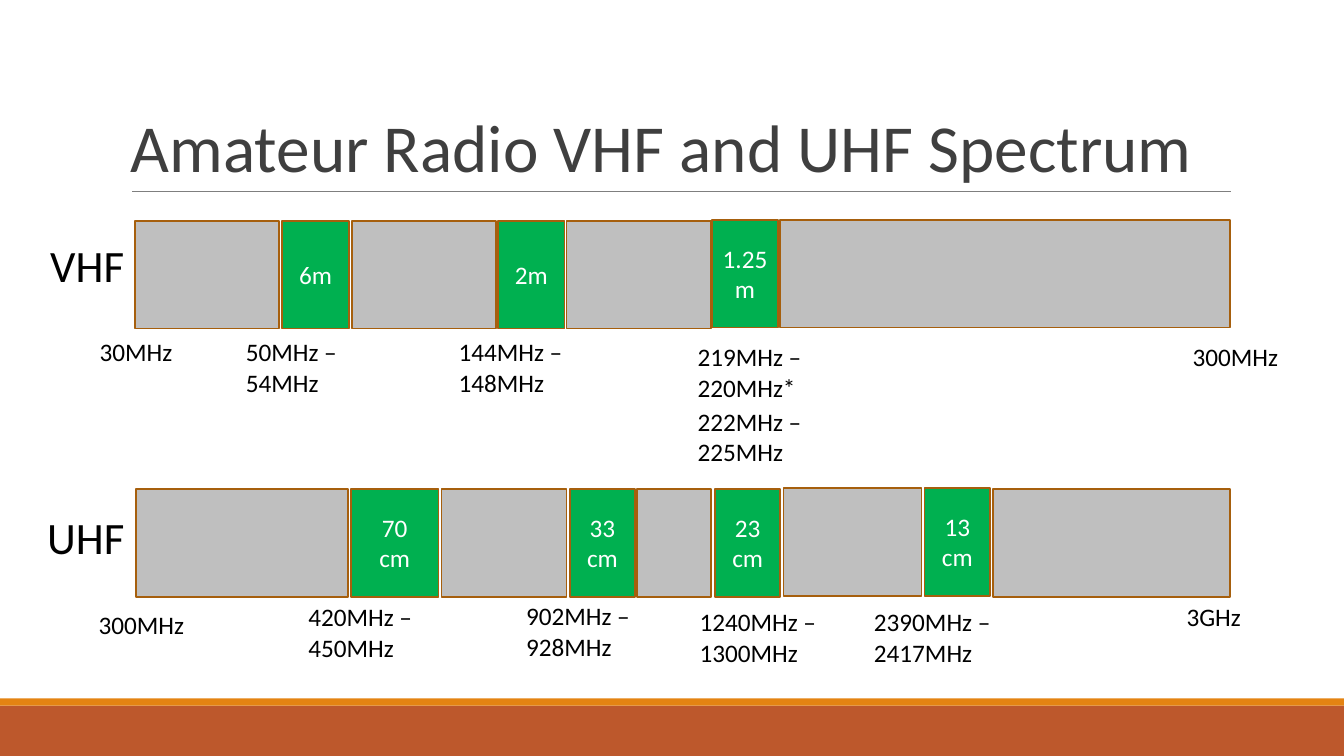
from lxml import etree
from pptx import Presentation
from pptx import util as u
from pptx.dml.color import RGBColor
from pptx.enum import shapes, text
from pptx.oxml.ns import qn

PX = 9144
WHITE = RGBColor(0xFF, 0xFF, 0xFF)
BLACK = RGBColor(0, 0, 0)
TITLE_GRAY = RGBColor(0x3F, 0x3F, 0x3F)
RULE_GRAY = RGBColor(0x7F, 0x7F, 0x7F)
BAND_GREEN = RGBColor(0x00, 0xB0, 0x50)
GAP_GRAY = RGBColor(0xBF, 0xBF, 0xBF)
EDGE_BROWN = RGBColor(0xA6, 0x5F, 0x0D)
FOOTER_RUST = RGBColor(0xBD, 0x58, 0x2C)
FOOTER_ORANGE = RGBColor(0xE4, 0x83, 0x12)
BAR_HEIGHT = 107

VHF_BLOCKS = [
    (134, 219, 143, ""), (280, 219, 66, "6m"), (349, 219, 143, ""),
    (494, 219, 66, "2m"), (562, 219, 143, ""), (706, 218, 66, "1.25m"),
    (774, 218, 446, ""),
]
UHF_BLOCKS = [
    (135, 485, 210, ""), (348, 485, 87, "70\ncm"), (438, 485, 124, ""),
    (565, 485, 65, "33 cm"), (632, 485, 73, ""), (709, 485, 65, "23 cm"),
    (777, 484, 137, ""), (917, 484, 65, "13 cm"), (985, 485, 235, ""),
]
FREQUENCIES = [
    (89, 329, 93, "30MHz"),
    (234, 329, 112, "50MHz –\n54MHz"),
    (445, 329, 130, "144MHz –\n148MHz"),
    (682, 334, 130, "219MHz –\n220MHz*"),
    (682, 398, 130, "222MHz –\n225MHz"),
    (1173, 334, 106, "300MHz"),
    (88, 600, 106, "300MHz"),
    (296, 592, 124, "420MHz –\n450MHz"),
    (512, 591, 124, "902MHz –\n928MHz"),
    (684, 597, 137, "1240MHz –\n1300MHz"),
    (857, 597, 137, "2390MHz –\n2417MHz"),
    (1167, 592, 75, "3GHz"),
]


class SpectrumSlide:
    font_name = "Calibri"
    body_size = 18

    def __init__(self, deck):
        self.page = deck.slides.add_slide(deck.slide_layouts[6])

    def set_words(self, frame, words, size, color, align, anchor):
        frame.word_wrap = True
        frame.vertical_anchor = anchor
        frame.text = words
        for para in frame.paragraphs:
            para.alignment = align
            para.font.name = self.font_name
            para.font.size = u.Pt(size)
            para.font.color.rgb = color

    def label(self, left, top, width, height, words, size=body_size,
              color=BLACK, anchor=text.MSO_ANCHOR.TOP):
        box = self.page.shapes.add_textbox(
            left * PX, top * PX, width * PX, height * PX)
        self.set_words(box.text_frame, words, size, color,
                       text.PP_ALIGN.LEFT, anchor)
        return box

    def rectangle(self, left, top, width, height, fill, edge=None):
        box = self.page.shapes.add_shape(
            shapes.MSO_SHAPE.RECTANGLE,
            left * PX, top * PX, width * PX, height * PX)
        box.shadow.inherit = False
        box.fill.solid()
        box.fill.fore_color.rgb = fill
        if edge is None:
            box.line.fill.background()
        else:
            box.line.color.rgb = edge
            box.line.width = u.Pt(1.25)
        return box

    def block(self, left, top, width, words):
        fill = BAND_GREEN if words else GAP_GRAY
        box = self.rectangle(left, top, width, BAR_HEIGHT, fill, EDGE_BROWN)
        if words:
            self.set_words(box.text_frame, words, self.body_size, WHITE,
                           text.PP_ALIGN.CENTER, text.MSO_ANCHOR.MIDDLE)

    def rule(self, left, right, top):
        line = self.page.shapes.add_connector(
            shapes.MSO_CONNECTOR.STRAIGHT,
            left * PX, top * PX, right * PX, top * PX)
        line.line.color.rgb = RULE_GRAY
        line.line.width = u.Pt(0.75)
        etree.SubElement(line._element.spPr, qn("a:effectLst"))


def main():
    deck = Presentation()
    deck.slide_width = 1333 * PX
    deck.slide_height = 750 * PX
    slide = SpectrumSlide(deck)

    slide.rectangle(0, 700, 1333, 50, FOOTER_RUST)
    slide.rectangle(0, 693, 1333, 7, FOOTER_ORANGE)
    slide.rule(131, 1221, 190)
    title = slide.label(120, 31, 1100, 159,
                        "Amateur Radio VHF and UHF Spectrum",
                        48, TITLE_GRAY, text.MSO_ANCHOR.BOTTOM)
    title.text_frame.paragraphs[0].line_spacing = 0.85

    for block in VHF_BLOCKS + UHF_BLOCKS:
        slide.block(*block)
    for left, top, width, words in FREQUENCIES:
        height = 71 if "\n" in words else 40
        slide.label(left, top, width, height, words)
    slide.label(40, 231, 94, 64, "VHF", 32)
    slide.label(37, 501, 98, 64, "UHF", 32)

    deck.save("out.pptx")


if __name__ == "__main__":
    main()
